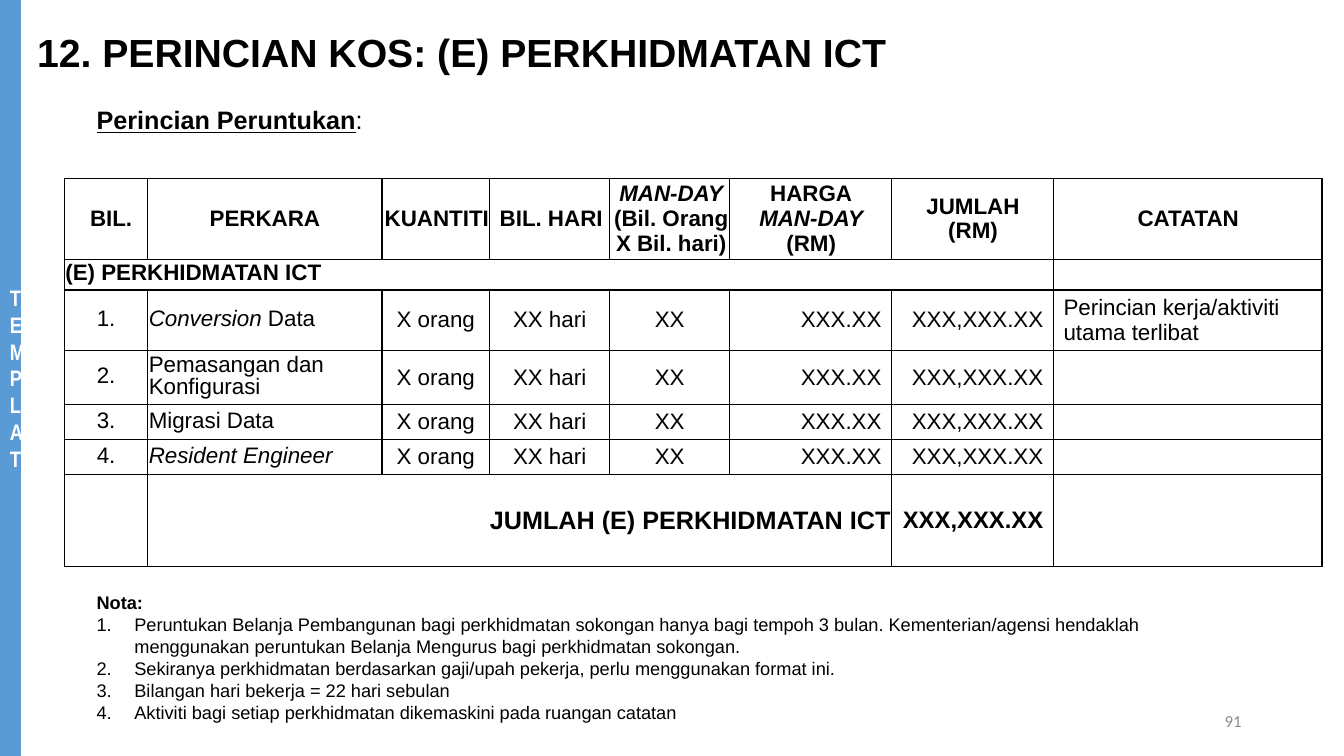
from lxml import etree
from pptx import Presentation
from pptx.dml.color import RGBColor
from pptx.enum.shapes import MSO_SHAPE
from pptx.enum.text import MSO_ANCHOR, PP_ALIGN
from pptx.oxml import parse_xml
from pptx.oxml.ns import nsdecls, qn
from pptx.util import Pt

LEFT, CENTER, RIGHT = PP_ALIGN.LEFT, PP_ALIGN.CENTER, PP_ALIGN.RIGHT
MIDDLE, TOP = MSO_ANCHOR.MIDDLE, MSO_ANCHOR.TOP
COLORS = {"black": "000000", "white": "FFFFFF", "band": "5B9BD5", "page": "8C8C8C"}


def write(paragraph, text, size, bold=False, color="black", font="Arial", align=LEFT):
    paragraph.alignment = align
    paragraph.font.name = font
    paragraph.font.size = Pt(size)
    paragraph.font.bold = bold
    paragraph.font.color.rgb = RGBColor.from_string(COLORS[color])
    for index, part in enumerate(text.split("_")):
        if part:
            run = paragraph.add_run()
            run.text = part
            if index % 2:
                run.font.italic = True


def add_box(left, top, width, height, anchor=TOP):
    frame = slide.shapes.add_textbox(Pt(left), Pt(top), Pt(width), Pt(height)).text_frame
    frame.word_wrap = True
    frame.vertical_anchor = anchor
    return frame


prs = Presentation()
prs.slide_width, prs.slide_height = Pt(960), Pt(540)
slide = prs.slides.add_slide(prs.slide_layouts[6])

band = slide.shapes.add_shape(MSO_SHAPE.RECTANGLE, 0, 0, Pt(15), Pt(540))
band.shadow.inherit = False
band.fill.solid()
band.fill.fore_color.rgb = RGBColor.from_string(COLORS["band"])
band.line.fill.background()
band.text_frame.word_wrap = True
band.text_frame.vertical_anchor = MIDDLE
write(band.text_frame.paragraphs[0], "TEMPLAT", 16, True, "white", "Arial Narrow", CENTER)

title = add_box(19.4, 15.8, 828, 46.8, MIDDLE).paragraphs[0]
write(title, "12. PERINCIAN KOS: (E) PERKHIDMATAN ICT", 28, True)
title.line_spacing = 0.9

subtitle = add_box(61.9, 71.3, 601, 28.8).paragraphs[0]
write(subtitle, "", 18)
heading = subtitle.add_run()
heading.text = "Perincian Peruntukan"
heading.font.bold = heading.font.underline = True
subtitle.add_run().text = ":"

COLUMN_WIDTHS = [59.6, 167.3, 76.9, 85.8, 85.8, 115.6, 115.6, 191.9]
ROW_HEIGHTS = [54, 22, 43, 39, 25, 25, 65.7]
HEADER_MARGINS = [7.2, 0, 1.5, 2.2, 2.2, 0.7, 0.7, 0.7]
BODY_ALIGN = [CENTER, LEFT, CENTER, CENTER, CENTER, RIGHT, RIGHT, LEFT]
HEADER = ["BIL.", "PERKARA", "KUANTITI", "BIL. HARI", "_MAN-DAY_\n(Bil. Orang X Bil. hari)",
          "HARGA\n_MAN-DAY_\n(RM)", "JUMLAH\n(RM)", "CATATAN"]
SERVICES = ["_Conversion_ Data", "Pemasangan dan Konfigurasi", "Migrasi Data",
            "_Resident Engineer_"]
REMARKS = ["Perincian kerja/aktiviti utama terlibat", "", "", ""]
TOTAL_ROW = len(ROW_HEIGHTS) - 1

rows = [HEADER, ["(E) PERKHIDMATAN ICT"] + [""] * 7]
for number, (service, remark) in enumerate(zip(SERVICES, REMARKS), 1):
    rows.append([f"{number}.", service, "X orang", "XX hari", "XX", "XXX.XX", "XXX,XXX.XX", remark])
rows.append(["", "JUMLAH (E) PERKHIDMATAN ICT", "", "", "", "", "XXX,XXX.XX", ""])

costs = slide.shapes.add_table(len(rows), len(HEADER), Pt(46), Pt(127.5),
                               Pt(sum(COLUMN_WIDTHS)), Pt(sum(ROW_HEIGHTS))).table
costs.first_row = costs.horz_banding = False
for column, width in zip(costs.columns, COLUMN_WIDTHS):
    column.width = Pt(width)
for row, height in zip(costs.rows, ROW_HEIGHTS):
    row.height = Pt(height)
costs.cell(1, 0).merge(costs.cell(1, 6))
costs.cell(TOTAL_ROW, 1).merge(costs.cell(TOTAL_ROW, 5))

for r, texts in enumerate(rows):
    is_service = 2 <= r < TOTAL_ROW
    for c, text in enumerate(texts):
        cell = costs.cell(r, c)
        cell.fill.background()
        for position, side in enumerate(("lnL", "lnR", "lnT", "lnB")):
            cell._tc.get_or_add_tcPr().insert(position, parse_xml(
                f'<a:{side} {nsdecls("a")} w="12700"><a:solidFill>'
                f'<a:srgbClr val="{COLORS["black"]}"/></a:solidFill></a:{side}>'))
        cell.vertical_anchor = MIDDLE
        cell.margin_top = cell.margin_bottom = 0
        padding = 7.2 if r > 1 and c > 4 else 0.7
        cell.margin_left = Pt(HEADER_MARGINS[c] if r == 0 else padding)
        cell.margin_right = Pt(0 if r == 0 else padding)
        if not text:
            continue
        size, align = 16, BODY_ALIGN[c]
        if r == 0:
            align = CENTER
        elif r == 1:
            align = LEFT
        elif r == TOTAL_ROW:
            size, align = (18 if c == 1 else 17), RIGHT
        for line_number, line in enumerate(text.split("\n")):
            frame = cell.text_frame
            paragraph = frame.add_paragraph() if line_number else frame.paragraphs[0]
            write(paragraph, line, size, not is_service, align=align)
            if r == 1 or (is_service and c < 2):
                paragraph.line_spacing = Pt(15.7)

NOTES = [
    "Peruntukan Belanja Pembangunan bagi perkhidmatan sokongan hanya bagi tempoh 3 bulan. "
    "Kementerian/agensi hendaklah menggunakan peruntukan Belanja Mengurus bagi perkhidmatan sokongan.",
    "Sekiranya perkhidmatan berdasarkan gaji/upah pekerja, perlu menggunakan format ini.",
    "Bilangan hari bekerja = 22 hari sebulan",
    "Aktiviti bagi setiap perkhidmatan dikemaskini pada ruangan catatan",
]
notes = add_box(61.9, 419, 838, 101.5)
write(notes.paragraphs[0], "Nota:", 13, True)
for note in NOTES:
    paragraph = notes.add_paragraph()
    write(paragraph, note, 13)
    properties = paragraph._p.get_or_add_pPr()
    properties.set("marL", str(Pt(27)))
    properties.set("indent", str(Pt(-27)))
    numbering = etree.Element(qn("a:buAutoNum"), type="arabicPeriod")
    properties.insert(0, numbering)

page_number = add_box(678, 500.4, 216, 28.8, MIDDLE).paragraphs[0]
write(page_number, "91", 12, color="page", font="Calibri", align=RIGHT)

prs.save("out.pptx")
